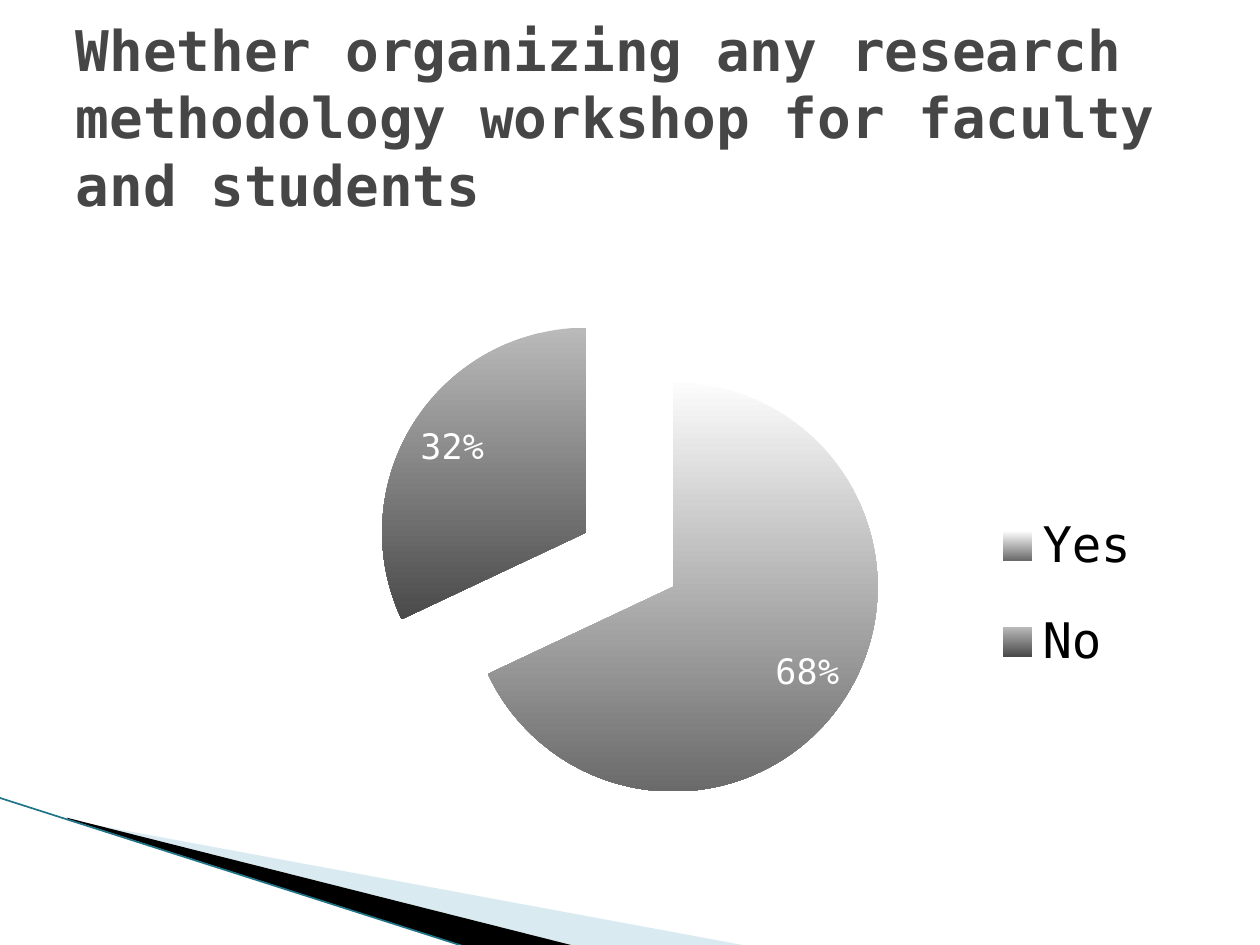
from dataclasses import dataclass
from typing import Optional

from lxml.etree import SubElement
from pptx import Presentation
from pptx.chart.data import CategoryChartData
from pptx.dml.color import RGBColor
from pptx.enum.chart import XL_CHART_TYPE, XL_LABEL_POSITION, XL_LEGEND_POSITION
from pptx.enum.shapes import MSO_CONNECTOR
from pptx.enum.text import MSO_ANCHOR, MSO_AUTO_SIZE, PP_ALIGN
from pptx.oxml import parse_xml
from pptx.oxml.ns import nsdecls, qn
from pptx.util import Inches, Pt


@dataclass(frozen=True)
class Theme:
    font: str = "DejaVu Sans Mono"
    title: str = "464646"
    text: str = "000000"
    label: str = "FFFFFF"
    edge: str = "1F7487"
    title_size: int = 32
    legend_size: int = 28
    label_size: int = 20


@dataclass(frozen=True)
class Wedge:
    points: tuple[tuple[float, float], ...]
    color: str
    opacity: Optional[int] = None


@dataclass(frozen=True)
class Answer:
    name: str
    percent: int
    top_color: str
    bottom_color: str


@dataclass(frozen=True)
class Area:
    """A part of the chart, as shares of the chart's size."""
    x: float
    y: float
    w: float
    h: float


THEME = Theme()
MARGIN, CONTENT_WIDTH = 0.5, 9
WEDGES = (
    Wedge(((0.55, 6.51), (5.95, 7.51), (4.56, 7.51), (0.55, 6.5)), "A0CBDC", 40),
    Wedge(((0.53, 6.49), (4.57, 7.51), (3.72, 7.52), (0.54, 6.5)), "000000"),
)
ANSWERS = (
    Answer("Yes", 68, "FCFCFC", "6A6A6A"),
    Answer("No", 32, "BABABA", "4A4A4A"),
)
PIE_AREA = Area(0.27, 0.16, 0.46, 0.82)
LEGEND_AREA = Area(0.79, 0.44, 0.19, 0.37)
EXPLOSION = 25


def rgb(color: str) -> RGBColor:
    return RGBColor.from_string(color)


def style_font(font, size: int, color: str, bold: bool = False) -> None:
    font.name, font.size, font.bold = THEME.font, Pt(size), bold
    font.color.rgb = rgb(color)


def draw_wedge(slide, wedge: Wedge) -> None:
    start, *rest = [(Inches(x), Inches(y)) for x, y in wedge.points]
    builder = slide.shapes.build_freeform(*start)
    builder.add_line_segments(rest, close=True)
    shape = builder.convert_to_shape()
    shape.shadow.inherit = False
    shape.fill.solid()
    shape.fill.fore_color.rgb = rgb(wedge.color)
    shape.line.fill.background()
    if wedge.opacity is not None:
        color = shape.fill._xPr.find(qn("a:solidFill"))[0]
        SubElement(color, qn("a:alpha"), val=str(wedge.opacity * 1000))


def draw_edge(slide) -> None:
    edge = slide.shapes.add_connector(
        MSO_CONNECTOR.STRAIGHT, Inches(-0.01), Inches(6.33), Inches(3.71), Inches(7.52))
    edge.line.color.rgb = rgb(THEME.edge)
    edge.line.width = Pt(0.95)
    SubElement(edge._element.spPr, qn("a:effectLst"))


def place(part, index: int, area: Area, inner: bool = False) -> None:
    """Fix the position of the plot area or legend within the chart."""
    for old in part.findall(qn("c:layout")):
        part.remove(old)
    target = '<c:layoutTarget val="inner"/>' if inner else ""
    part.insert(index, parse_xml(
        f'<c:layout {nsdecls("c")}><c:manualLayout>{target}'
        '<c:xMode val="edge"/><c:yMode val="edge"/>'
        f'<c:x val="{area.x}"/><c:y val="{area.y}"/>'
        f'<c:w val="{area.w}"/><c:h val="{area.h}"/>'
        '</c:manualLayout></c:layout>'))


def draw_pie(slide) -> None:
    data = CategoryChartData()
    data.categories = [answer.name for answer in ANSWERS]
    data.add_series("Series 1", [answer.percent for answer in ANSWERS])
    chart = slide.shapes.add_chart(
        XL_CHART_TYPE.PIE, Inches(MARGIN), Inches(1.62),
        Inches(CONTENT_WIDTH), Inches(4.95), data).chart
    chart.has_title = False
    style_font(chart.font, 10, THEME.text)

    # Slices
    plot = chart.plots[0]
    plot.vary_by_categories = True
    series = plot.series[0]
    for index, answer in enumerate(ANSWERS):
        slice_format = series.points[index].format
        slice_format.fill.gradient()
        slice_format.fill.gradient_angle = 270
        top, bottom = slice_format.fill.gradient_stops
        top.color.rgb, bottom.color.rgb = rgb(answer.top_color), rgb(answer.bottom_color)
        slice_format.line.fill.background()
    series._element.find(qn("c:dPt")).addprevious(
        parse_xml(f'<c:explosion {nsdecls("c")} val="{EXPLOSION}"/>'))

    # Percentages
    plot.has_data_labels = True
    labels = plot.data_labels
    labels.show_percentage, labels.show_value = True, False
    labels.number_format, labels.number_format_is_linked = "0%", False
    labels.position = XL_LABEL_POSITION.INSIDE_END
    style_font(labels.font, THEME.label_size, THEME.label)

    # Legend
    chart.has_legend = True
    legend = chart.legend
    legend.position = XL_LEGEND_POSITION.RIGHT
    legend.include_in_layout = False
    style_font(legend.font, THEME.legend_size, THEME.text)
    place(legend._element, 1, LEGEND_AREA)
    place(chart._chartSpace.chart.plotArea, 0, PIE_AREA, inner=True)


def write_title(slide, wording: str) -> None:
    title = slide.shapes.title
    title.left, title.top = Inches(MARGIN), Inches(0.3)
    title.width, title.height = Inches(CONTENT_WIDTH), Inches(1.25)
    frame = title.text_frame
    frame.text = wording
    frame.word_wrap = True
    frame.auto_size = MSO_AUTO_SIZE.NONE
    frame.vertical_anchor = MSO_ANCHOR.MIDDLE
    heading = frame.paragraphs[0]
    heading.alignment = PP_ALIGN.LEFT
    style_font(heading.font, THEME.title_size, THEME.title, bold=True)


def main() -> None:
    deck = Presentation()
    deck.slide_width, deck.slide_height = Inches(10), Inches(7.5)
    slide = deck.slides.add_slide(deck.slide_layouts[5])

    # Corner decoration
    for wedge in WEDGES:
        draw_wedge(slide, wedge)
    draw_edge(slide)

    # Content
    draw_pie(slide)
    write_title(slide, "Whether organizing any research methodology workshop "
                       "for faculty and students")
    deck.save("out.pptx")


if __name__ == "__main__":
    main()
